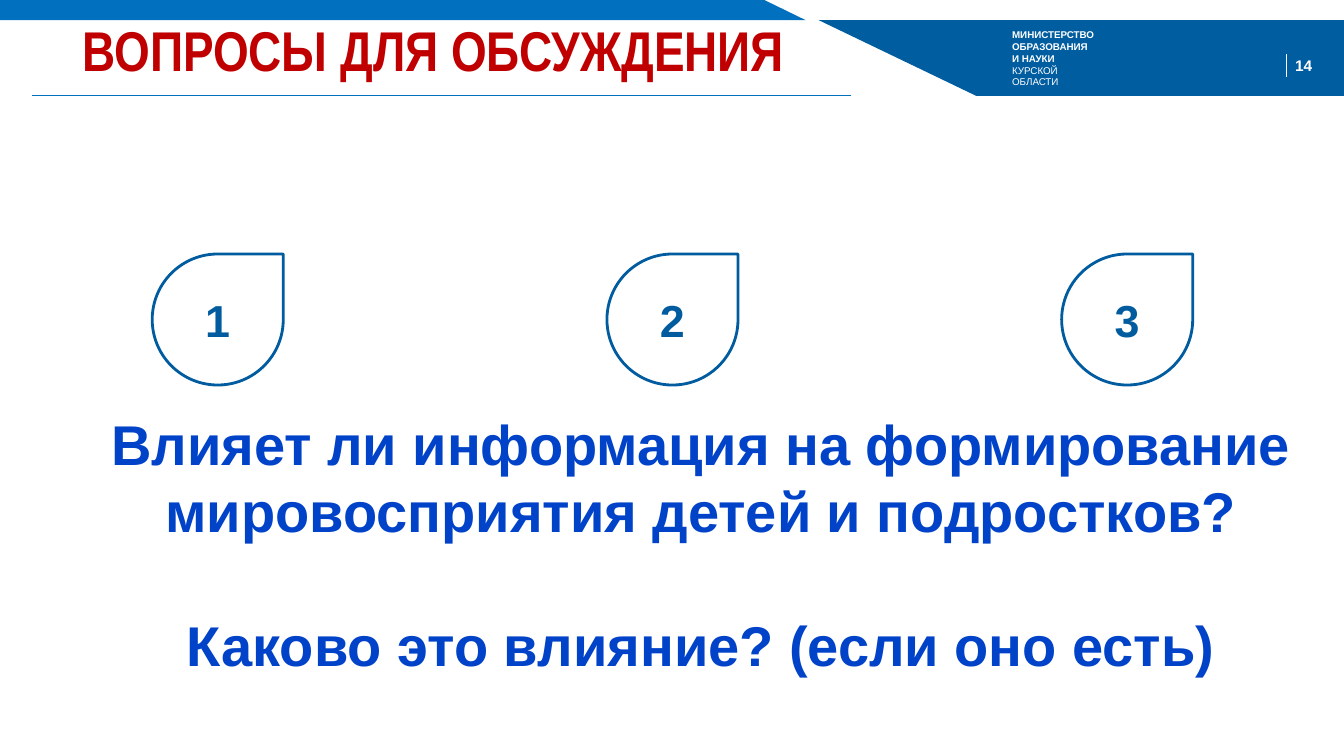
"""Build the discussion questions slide."""
from dataclasses import dataclass

from lxml.etree import SubElement
from pptx import Presentation
from pptx.dml.color import RGBColor
from pptx.enum.shapes import MSO_CONNECTOR, MSO_SHAPE
from pptx.enum.text import MSO_ANCHOR, PP_ALIGN
from pptx.oxml.ns import qn
from pptx.util import Pt

PX = 9144


@dataclass(frozen=True)
class Theme:
    sky: str = "0070BF"
    navy: str = "005DA0"
    drop: str = "005C9F"
    royal: str = "0042C8"
    red: str = "C00000"
    white: str = "FFFFFF"
    sans: str = "Arial"
    narrow: str = "Arial Narrow"
    small: int = 7
    page: int = 11
    digit: int = 32
    large: int = 40


def write(frame, text, size, color, font, light=(), align=PP_ALIGN.CENTER,
          anchor=MSO_ANCHOR.TOP, inset=0, gap=0, pitch=None):
    frame.word_wrap = True
    frame.vertical_anchor = anchor
    frame.margin_left = frame.margin_right = inset * PX
    frame.margin_top = frame.margin_bottom = inset * PX // 2
    for row, line in enumerate(text.split("\n")):
        para = frame.add_paragraph() if row else frame.paragraphs[0]
        para.alignment = align
        if row and gap:
            para.space_before = Pt(gap)
        if pitch:
            para.line_spacing = Pt(pitch)
        run = para.add_run()
        run.text = line
        run.font.size = Pt(size)
        run.font.name = font
        run.font.bold = row not in light
        run.font.color.rgb = RGBColor.from_string(color)


class Deck:
    def __init__(self, theme):
        self.theme = theme
        self.show = Presentation()
        self.show.slide_width = 1333 * PX
        self.show.slide_height = 750 * PX
        slide = self.show.slides.add_slide(self.show.slide_layouts[6])
        self.shapes = slide.shapes

    def band(self, points, color):
        start, *rest = points
        pen = self.shapes.build_freeform(*start, scale=PX)
        pen.add_line_segments(rest, close=True)
        shape = pen.convert_to_shape()
        shape.shadow.inherit = False
        shape.fill.solid()
        shape.fill.fore_color.rgb = RGBColor.from_string(color)
        shape.line.fill.background()

    def rule(self, start, end, color):
        ends = [v * PX for v in (*start, *end)]
        line = self.shapes.add_connector(MSO_CONNECTOR.STRAIGHT, *ends)
        line.line.width = Pt(0.5)
        line.line.color.rgb = RGBColor.from_string(color)
        SubElement(line._element.spPr, qn("a:effectLst"))

    def text(self, box, text, **style):
        shape = self.shapes.add_textbox(*(v * PX for v in box))
        write(shape.text_frame, text, **style)

    def drop(self, left, top, side, text):
        box = [v * PX for v in (left, top, side, side)]
        shape = self.shapes.add_shape(MSO_SHAPE.TEAR, *box)
        shape.shadow.inherit = False
        shape.fill.background()
        shape.line.width = Pt(2)
        shape.line.color.rgb = RGBColor.from_string(self.theme.drop)
        write(shape.text_frame, text, size=self.theme.digit,
              color=self.theme.drop, font=self.theme.sans,
              anchor=MSO_ANCHOR.MIDDLE, inset=10)


def main():
    look = Theme()
    deck = Deck(look)
    deck.band([(0, 0), (758, 0), (799, 20), (0, 20)], look.sky)
    deck.band([(812, 20), (1333, 20), (1333, 95), (968, 95)], look.navy)
    deck.rule((32, 95), (844, 95), look.sky)
    deck.text((1278, 54, 30, 22), "14", size=look.page, color=look.white,
              font=look.sans, anchor=MSO_ANCHOR.MIDDLE)
    deck.rule((1276, 54), (1276, 76), look.white)
    deck.text((994, 24, 102, 69),
              "МИНИСТЕРСТВО\nОБРАЗОВАНИЯ\nИ НАУКИ\nКУРСКОЙ\nОБЛАСТИ",
              size=look.small, color=look.white, font=look.sans,
              light=(3, 4), align=PP_ALIGN.LEFT, inset=10)
    deck.text((36, 24, 788, 96), "ВОПРОСЫ ДЛЯ ОБСУЖДЕНИЯ", size=look.large,
              color=look.red, font=look.narrow, pitch=42)
    for step in range(3):
        deck.drop(151 + 451 * step, 252, 130, str(step + 1))
    deck.text((90, 406, 1210, 265),
              "Влияет ли информация на формирование мировосприятия "
              "детей и подростков?\nКаково это влияние? (если оно есть)",
              size=look.large, color=look.royal, font=look.sans, gap=48)
    deck.show.save("out.pptx")


if __name__ == "__main__":
    main()
